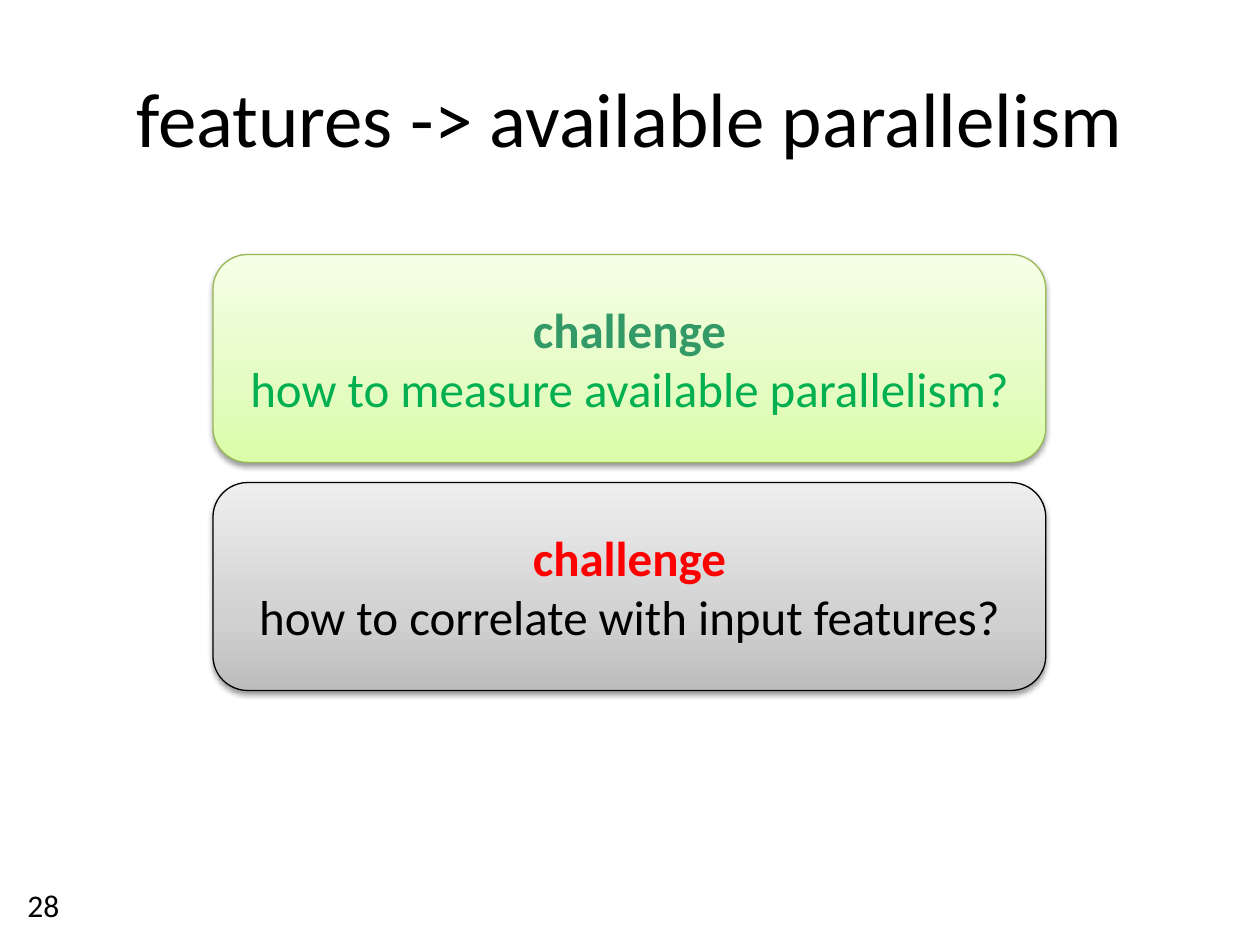
from copy import deepcopy
from dataclasses import dataclass

from lxml import etree
from pptx import Presentation
from pptx.dml.color import RGBColor
from pptx.enum.shapes import MSO_SHAPE
from pptx.enum.text import MSO_ANCHOR, PP_ALIGN
from pptx.oxml import parse_xml
from pptx.oxml.ns import nsdecls, qn
from pptx.util import Inches, Pt

ROUND = MSO_SHAPE.ROUNDED_RECTANGLE
MIDDLE = MSO_ANCHOR.MIDDLE
CENTER = PP_ALIGN.CENTER
LEFT = PP_ALIGN.LEFT
FONT = "Calibri"
COLORS = {
    "black": "000000", "red": "FF0000", "green": "00B050", "teal": "339966",
    "olive": "98B955",
    "lime low": "DAFDA7", "lime mid": "E4FCC2", "lime top": "F5FFE7",
    "gray low": "BDBDBD", "gray mid": "D1D1D1", "gray top": "EEEEEE",
}
STOPS = {"low": 0, "mid": 0.35, "top": 1}
BOX_X, BOX_Y, BOX_W, BOX_H = 1.69, 2.02, 6.61, 1.65
STEP = 1.81


@dataclass
class Box:
    ask: str
    tint: str
    line: str
    head: str
    body: str


BOXES = [
    Box("how to measure available parallelism?", "lime", "olive", "teal", "green"),
    Box("how to correlate with input features?", "gray", "black", "red", "black"),
]


def rgb(name: str) -> RGBColor:
    return RGBColor.from_string(COLORS[name])


def add_run(para, text: str, size: int, color: str = "black",
            bold: bool = False, align=CENTER) -> None:
    para.alignment = align
    run = para.add_run()
    run.text = text
    font = run.font
    font.name, font.size, font.bold = FONT, Pt(size), bold
    font.color.rgb = rgb(color)


def set_fill(shape, tint: str) -> None:
    shape.fill.gradient()
    shape.fill.gradient_angle = 90
    # The default gradient has two stops; add a third
    stops: etree._Element = shape._element.spPr.find(qn("a:gradFill")).find(qn("a:gsLst"))
    stops.insert(1, deepcopy(stops[0]))
    for stop, (part, pos) in zip(shape.fill.gradient_stops, STOPS.items()):
        stop.position = pos
        stop.color.rgb = rgb(f"{tint} {part}")


def set_shadow(shape) -> None:
    shape.shadow.inherit = False
    effect = shape._element.spPr.find(qn("a:effectLst"))
    effect.append(parse_xml(
        f'<a:outerShdw {nsdecls("a")} blurRad="{Pt(3.1)}" dist="{Pt(1.6)}" '
        f'dir="5400000" rotWithShape="0"><a:srgbClr val="{COLORS["black"]}">'
        '<a:alpha val="38000"/></a:srgbClr></a:outerShdw>'))


def add_box(slide, box: Box, top: float) -> None:
    shape = slide.shapes.add_shape(
        ROUND, Inches(BOX_X), Inches(top), Inches(BOX_W), Inches(BOX_H))
    set_fill(shape, box.tint)
    shape.line.color.rgb = rgb(box.line)
    shape.line.width = Pt(0.75)
    set_shadow(shape)
    frame = shape.text_frame
    frame.word_wrap = True
    frame.vertical_anchor = MIDDLE
    add_run(frame.paragraphs[0], "challenge", 28, box.head, bold=True)
    add_run(frame.add_paragraph(), box.ask, 28, box.body)


def main() -> None:
    deck = Presentation()
    deck.slide_width, deck.slide_height = Inches(10), Inches(7.5)
    slide = deck.slides.add_slide(deck.slide_layouts[5])

    # Title
    title = slide.shapes.title
    title.left, title.top = Inches(0.5), Inches(0.3)
    title.width, title.height = Inches(9), Inches(1.25)
    title.text_frame.vertical_anchor = MIDDLE
    add_run(title.text_frame.paragraphs[0], "features -> available parallelism", 44)

    # Challenge boxes
    for row, box in enumerate(BOXES):
        add_box(slide, box, BOX_Y + row * STEP)

    # Page number
    page = slide.shapes.add_textbox(
        Inches(0.12), Inches(6.98), Inches(2.33), Inches(0.4))
    page.text_frame.word_wrap = True
    add_run(page.text_frame.paragraphs[0], "28", 18, align=LEFT)

    deck.save("out.pptx")


if __name__ == "__main__":
    main()
